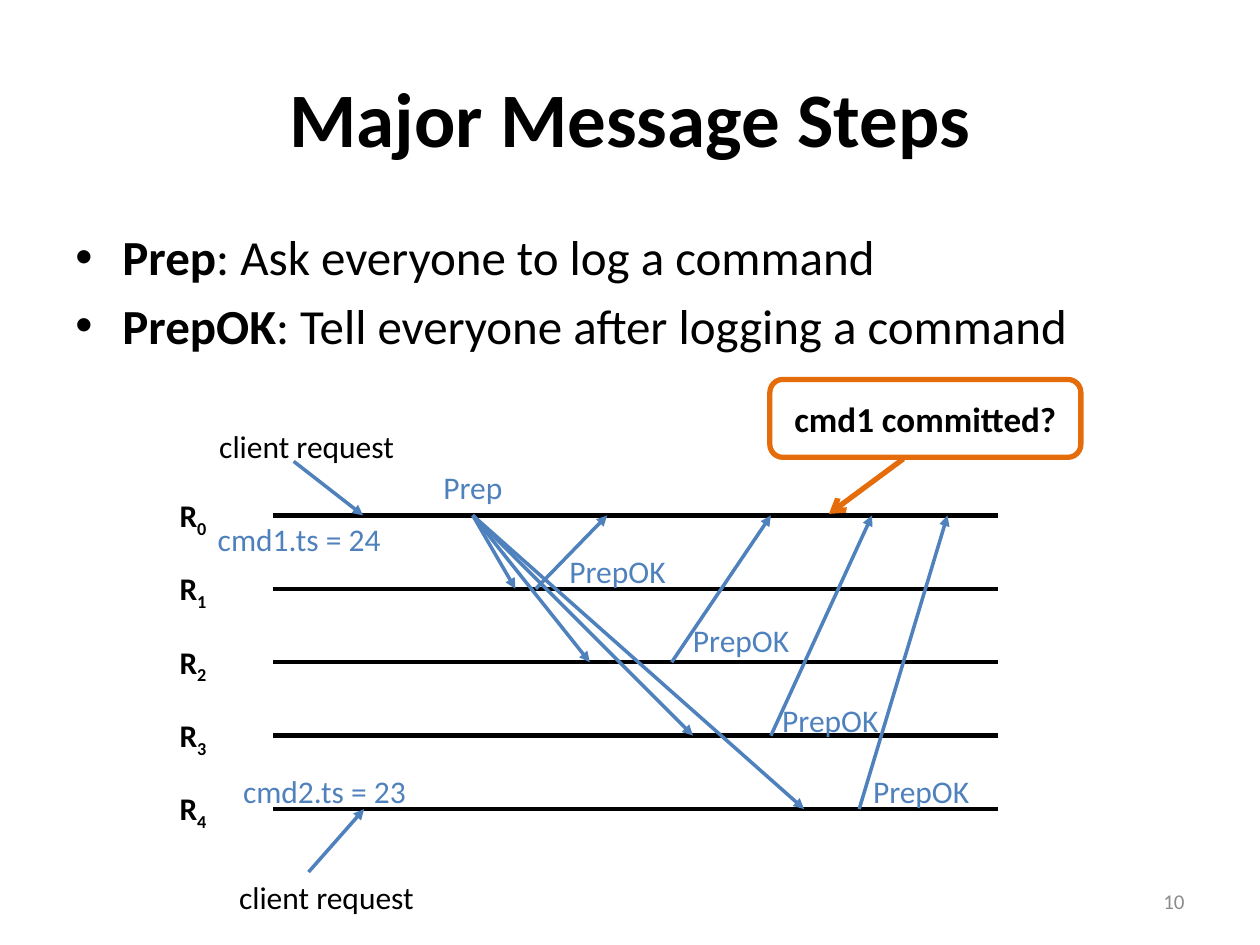
"""Build the slide on the major message steps between replicas."""
from typing import NamedTuple

from lxml.etree import SubElement
from pptx import Presentation
from pptx.dml.color import RGBColor
from pptx.enum.shapes import MSO_CONNECTOR, MSO_SHAPE
from pptx.enum.text import MSO_ANCHOR, PP_ALIGN
from pptx.oxml.ns import qn
from pptx.util import Cm, Pt

BLACK, WHITE, BLUE, ORANGE, GRAY = "000000", "FFFFFF", "4F81BD", "E46C0A", "8C8C8C"
LINE_LEFT, LINE_RIGHT = 5.51, 20.12
REPLICA_TOPS = [10.39 + 1.48 * number for number in range(5)]
PREP_START = 9.53


class Label(NamedTuple):
    text: str
    left: float
    top: float
    width: float
    color: str = BLUE


class Arrow(NamedTuple):
    start: tuple[float, float]
    end: tuple[float, float]
    color: str = BLUE
    width: float = 2
    head: str | None = "triangle"


class Reply(NamedTuple):
    replica: int
    start: float
    end: float
    label_left: float
    label_top: float


class Definition(NamedTuple):
    term: str
    meaning: str


DEFINITIONS = [
    Definition("Prep", ": Ask everyone to log a command"),
    Definition("PrepOK", ": Tell everyone after logging a command"),
]
PREP_ENDS = [10.39, 11.89, 13.97, 16.21]
REPLIES = [
    Reply(1, 10.8, 12.24, 11.23, 11),
    Reply(2, 13.54, 15.54, 13.72, 12.4),
    Reply(3, 15.54, 17.58, 15.52, 14),
    Reply(4, 17.32, 19.1, 17.35, 15.44),
]
LABELS = [
    Label("client request", 4.17, 8.48, 4.09, BLACK),
    Label("client request", 4.57, 17.58, 4.09, BLACK),
    Label("Prep", 8.69, 9.32, 1.73),
    Label("cmd1.ts = 24", 4.14, 10.36, 3.84),
    Label("cmd2.ts = 23", 4.65, 15.44, 3.84),
]
REQUESTS = [
    Arrow((5.92, 9.3), (7.32, REPLICA_TOPS[0])),
    Arrow((6.22, 17.58), (7.34, REPLICA_TOPS[4])),
]


def rgb(color: str) -> RGBColor:
    return RGBColor.from_string(color)


def write(paragraph, text: str, *, size: float = 18, bold: bool = False,
          color: str = BLACK, baseline: int = 0) -> None:
    run = paragraph.add_run()
    run.text = text
    run.font.name = "Calibri"
    run.font.size = Pt(size)
    run.font.bold = bold
    run.font.color.rgb = rgb(color)
    if baseline:
        run.font._element.set("baseline", str(baseline * 1000))


def add_text_box(slide, left: float, top: float, width: float,
                 height: float = 1.02, wrap: bool = False):
    shape = slide.shapes.add_textbox(Cm(left), Cm(top), Cm(width), Cm(height))
    shape.text_frame.word_wrap = wrap
    return shape.text_frame


def add_label(slide, label: Label) -> None:
    frame = add_text_box(slide, label.left, label.top, label.width)
    write(frame.paragraphs[0], label.text, color=label.color)


def add_arrow(slide, arrow: Arrow) -> None:
    points = [Cm(value) for value in (*arrow.start, *arrow.end)]
    connector = slide.shapes.add_connector(MSO_CONNECTOR.STRAIGHT, *points)
    connector.line.color.rgb = rgb(arrow.color)
    connector.line.width = Pt(arrow.width)
    if arrow.head:
        SubElement(connector.line._get_or_add_ln(), qn("a:tailEnd"), type=arrow.head)
    SubElement(connector._element.spPr, qn("a:effectLst"))


def add_title(slide) -> None:
    title = slide.shapes.title
    title.left, title.top, title.width, title.height = Cm(1.27), Cm(0.76), Cm(22.86), Cm(3.18)
    title.text_frame.vertical_anchor = MSO_ANCHOR.MIDDLE
    paragraph = title.text_frame.paragraphs[0]
    paragraph.alignment = PP_ALIGN.CENTER
    write(paragraph, "Major Message Steps", size=44, bold=True)


def add_definitions(slide) -> None:
    frame = add_text_box(slide, 1.27, 4.45, 22.86, 3.1, wrap=True)
    for index, definition in enumerate(DEFINITIONS):
        paragraph = frame.add_paragraph() if index else frame.paragraphs[0]
        properties = paragraph._p.get_or_add_pPr()
        properties.set("marL", str(Cm(0.95)))
        properties.set("indent", str(-Cm(0.95)))
        paragraph.space_before = Pt(5.6)
        SubElement(properties, qn("a:buFont"), typeface="Arial")
        SubElement(properties, qn("a:buChar"), char="•")
        write(paragraph, definition.term, size=28, bold=True)
        write(paragraph, definition.meaning, size=28)


def add_replica(slide, number: int, top: float) -> None:
    add_arrow(slide, Arrow((LINE_LEFT, top), (LINE_RIGHT, top), BLACK, 2.5, None))
    paragraph = add_text_box(slide, 3.37, top - 0.52, 1.09).paragraphs[0]
    write(paragraph, "R", bold=True)
    write(paragraph, str(number), bold=True, baseline=-25)


def add_callout(slide) -> None:
    shape = slide.shapes.add_shape(
        MSO_SHAPE.ROUNDED_RECTANGLE, Cm(15.52), Cm(7.65), Cm(6.27), Cm(1.57))
    shape.shadow.inherit = False
    shape.fill.solid()
    shape.fill.fore_color.rgb = rgb(WHITE)
    shape.line.color.rgb = rgb(ORANGE)
    shape.line.width = Pt(3)
    shape.text_frame.vertical_anchor = MSO_ANCHOR.MIDDLE
    paragraph = shape.text_frame.paragraphs[0]
    paragraph.alignment = PP_ALIGN.CENTER
    write(paragraph, "cmd1 committed?", size=20, bold=True)
    add_arrow(slide, Arrow((18.21, 9.25), (16.71, 10.36), ORANGE, 3, "arrow"))


def add_slide_number(slide) -> None:
    frame = add_text_box(slide, 22.86, 17.65, 1.27, wrap=True)
    frame.vertical_anchor = MSO_ANCHOR.MIDDLE
    frame.paragraphs[0].alignment = PP_ALIGN.RIGHT
    write(frame.paragraphs[0], "10", size=12, color=GRAY)


def main() -> None:
    presentation = Presentation()
    presentation.slide_width, presentation.slide_height = Cm(25.4), Cm(19.05)
    slide = presentation.slides.add_slide(presentation.slide_layouts.get_by_name("Title Only"))
    add_title(slide)
    add_definitions(slide)
    for number, top in enumerate(REPLICA_TOPS):
        add_replica(slide, number, top)
    for request in REQUESTS:
        add_arrow(slide, request)
    for end, top in zip(PREP_ENDS, REPLICA_TOPS[1:]):
        add_arrow(slide, Arrow((PREP_START, REPLICA_TOPS[0]), (end, top)))
    for reply in REPLIES:
        start = (reply.start, REPLICA_TOPS[reply.replica])
        add_arrow(slide, Arrow(start, (reply.end, REPLICA_TOPS[0])))
        add_label(slide, Label("PrepOK", reply.label_left, reply.label_top, 2.46))
    for label in LABELS:
        add_label(slide, label)
    add_callout(slide)
    add_slide_number(slide)
    presentation.save("out.pptx")


if __name__ == "__main__":
    main()
